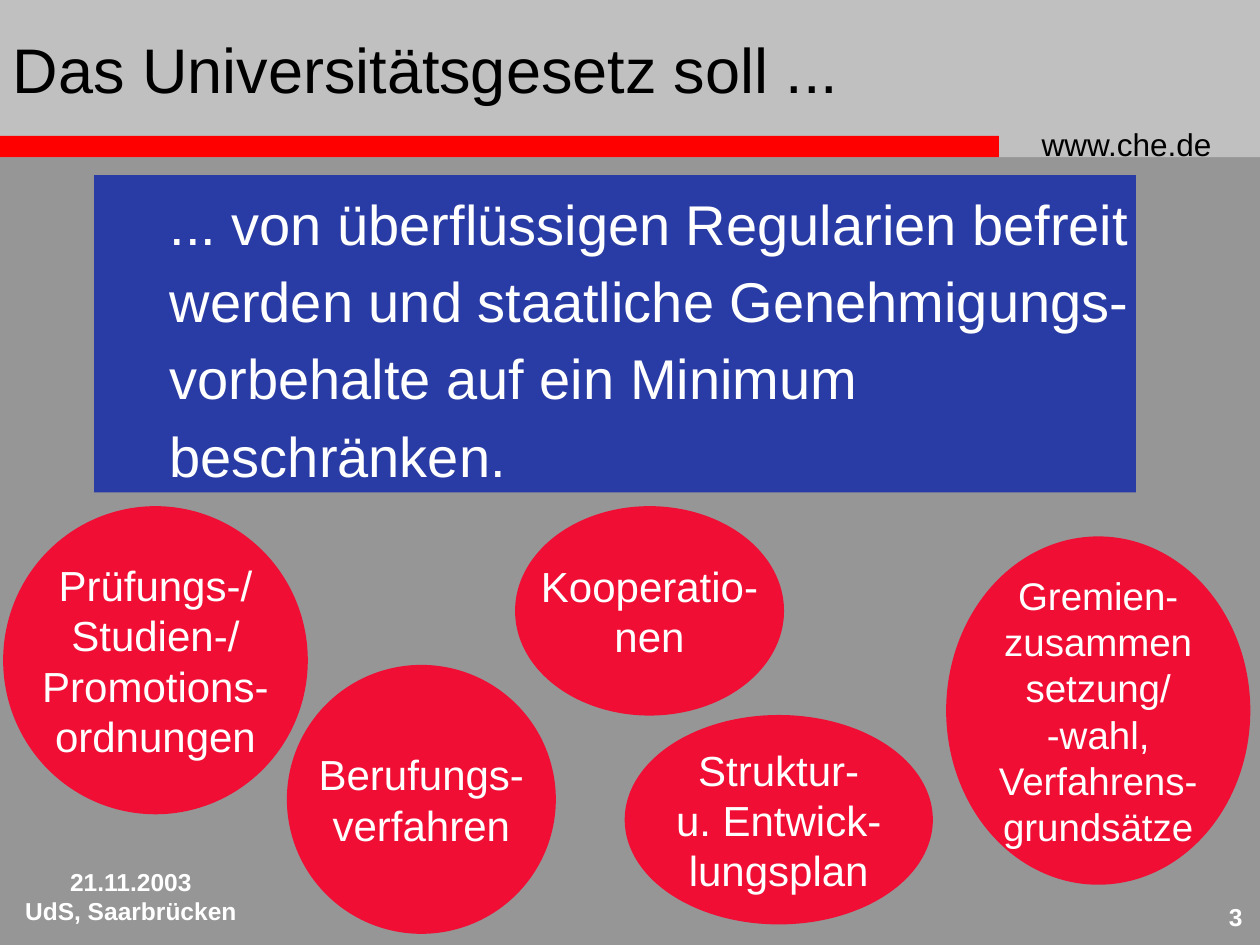
from dataclasses import dataclass

from pptx import Presentation
from pptx.dml.color import RGBColor
from pptx.enum.shapes import MSO_SHAPE
from pptx.enum.text import MSO_ANCHOR, PP_ALIGN
from pptx.util import Cm, Pt


@dataclass(frozen=True)
class Theme:
    font: str = "Arial"
    background: str = "969696"
    band: str = "C0C0C0"
    stripe: str = "FF0000"
    panel: str = "293BA5"
    bubble: str = "F00E34"
    dark: str = "000000"
    light: str = "FFFFFF"
    title_size: int = 36
    panel_size: int = 32
    bubble_size: int = 24
    dense_size: int = 22
    address_size: int = 18
    footer_size: int = 14


THEME = Theme()

# Places are left, top, width, height in centimetres.
TITLE = "Das Universitätsgesetz soll ..."
TITLE_PLACE = (0, 0, 20.52, 2.74)
BARS = [
    ((0, 0, 25.4, 3.17), THEME.band),
    ((0, 2.74, 20.14, 0.43), THEME.stripe),
]
DEMAND = [
    "... von überflüssigen Regularien befreit",
    "werden und staatliche Genehmigungs-",
    "vorbehalte auf ein Minimum",
    "beschränken.",
]
DEMAND_PLACE = (1.9, 3.53, 21, 6.4)
BUBBLES = [
    (["Prüfungs-/", "Studien-/", "Promotions-", "ordnungen"],
     (0.17, 10.31, 5.93, 6), THEME.bubble_size),
    (["Berufungs-", "verfahren"],
     (5.89, 13.51, 5.21, 5.21), THEME.bubble_size),
    (["Gremien-", "zusammen", "setzung/", "-wahl,", "Verfahrens-", "grundsätze"],
     (19.18, 10.92, 5.92, 6.81), THEME.dense_size),
    (["Kooperatio-", "nen"],
     (10.49, 10.31, 5.21, 4.01), THEME.bubble_size),
    (["Struktur-", "u. Entwick-", "lungsplan"],
     (12.7, 14.52, 6, 4.01), THEME.bubble_size),
]
LABELS = [
    (["www.che.de"], (20.75, 2.39, 4.45, 1.02),
     THEME.address_size, THEME.dark, PP_ALIGN.LEFT, False),
    (["21.11.2003", "UdS, Saarbrücken"], (0, 17.35, 5.28, 1.27),
     THEME.footer_size, THEME.light, PP_ALIGN.CENTER, True),
    (["3"], (23.83, 18.06, 1.47, 1.07),
     THEME.footer_size, THEME.light, PP_ALIGN.RIGHT, True),
]


def lengths(place):
    return [Cm(value) for value in place]


def write(shape, lines, size, color, align=PP_ALIGN.LEFT, bold=False,
          anchor=MSO_ANCHOR.MIDDLE, wrap=False):
    frame = shape.text_frame
    frame.text = "\n".join(lines)
    frame.word_wrap = wrap
    frame.vertical_anchor = anchor
    for para in frame.paragraphs:
        para.alignment = align
        for span in para.runs:
            span.font.name = THEME.font
            span.font.size = Pt(size)
            span.font.bold = bold
            span.font.color.rgb = RGBColor.from_string(color)


def add_filled(slide, kind, place, color, line_width=0):
    shape = slide.shapes.add_shape(kind, *lengths(place))
    shape.shadow.inherit = False
    shape.fill.solid()
    shape.fill.fore_color.rgb = RGBColor.from_string(color)
    if line_width:
        shape.line.color.rgb = RGBColor.from_string(color)
        shape.line.width = Pt(line_width)
    else:
        shape.line.fill.background()
    return shape


def main():
    deck = Presentation()
    deck.slide_width, deck.slide_height = Cm(25.4), Cm(19.05)
    slide = deck.slides.add_slide(deck.slide_layouts[5])
    slide.background.fill.solid()
    slide.background.fill.fore_color.rgb = RGBColor.from_string(THEME.background)

    for place, color in BARS:
        add_filled(slide, MSO_SHAPE.RECTANGLE, place, color)

    for lines, place, size, color, align, bold in LABELS:
        box = slide.shapes.add_textbox(*lengths(place))
        write(box, lines, size, color, align, bold, MSO_ANCHOR.TOP, wrap=True)

    title = slide.shapes.title
    title.left, title.top, title.width, title.height = lengths(TITLE_PLACE)
    write(title, [TITLE], THEME.title_size, THEME.dark, wrap=True)
    # Bring the title in front of the bars.
    slide.shapes.element.append(title.element)

    panel = add_filled(slide, MSO_SHAPE.RECTANGLE, DEMAND_PLACE, THEME.panel)
    write(panel, DEMAND, THEME.panel_size, THEME.light)
    for para in panel.text_frame.paragraphs:
        para.level = 1
        para.line_spacing = 1.15
        properties = para._p.get_or_add_pPr()
        properties.set("marL", str(Cm(1.27)))
        properties.set("indent", "0")

    for lines, place, size in BUBBLES:
        bubble = add_filled(slide, MSO_SHAPE.OVAL, place, THEME.bubble, line_width=6)
        write(bubble, lines, size, THEME.light, PP_ALIGN.CENTER)

    deck.save("out.pptx")


if __name__ == "__main__":
    main()
